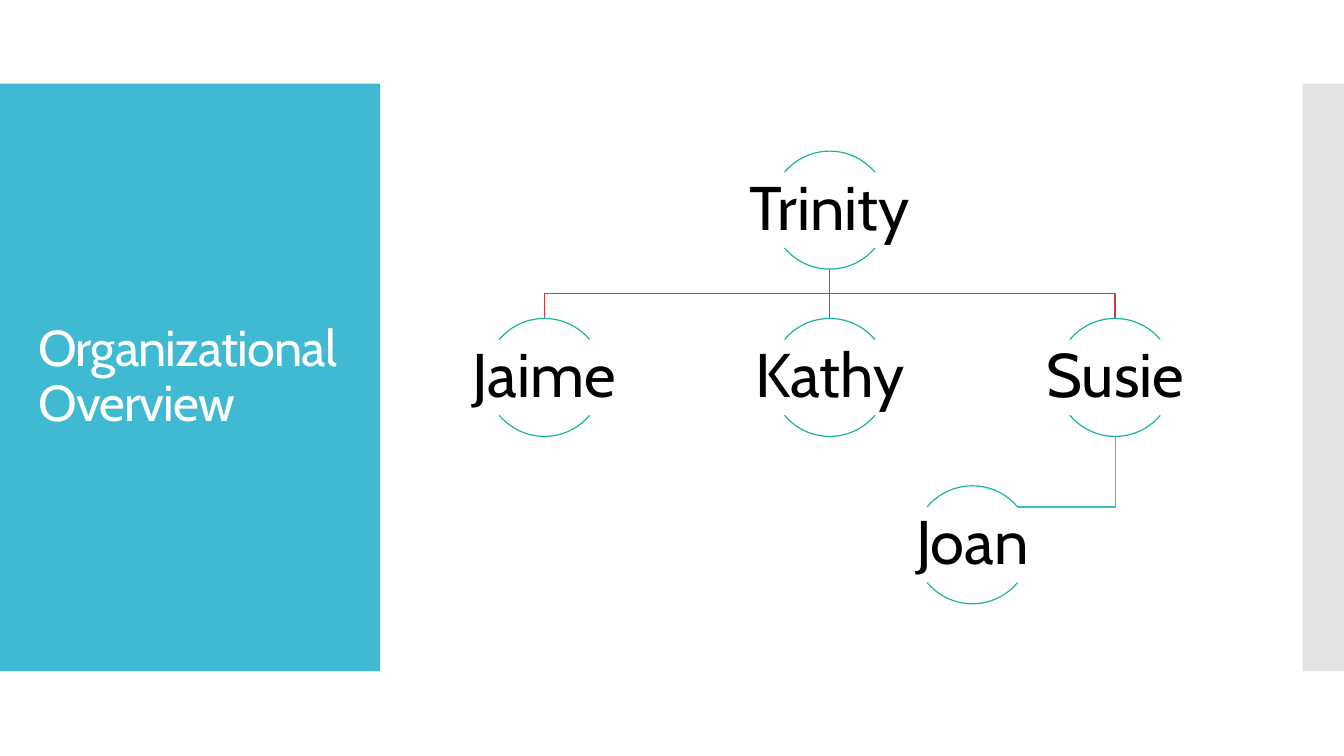
from pptx import Presentation
from pptx.dml.color import RGBColor
from pptx.enum.shapes import MSO_CONNECTOR as Link, MSO_SHAPE as Kind
from pptx.enum.text import MSO_ANCHOR as Anchor, MSO_AUTO_SIZE as Fit, PP_ALIGN as Align
from pptx.oxml.ns import qn
from pptx.util import Inches, Pt
from lxml import etree

TEAL = RGBColor(0x40, 0xBA, 0xD2)
GRAY = RGBColor(0xC8, 0xC8, 0xC8)
RED = RGBColor(0xD5, 0x39, 0x3D)
GREEN = RGBColor(0x1A, 0xB3, 0x9F)
WHITE = RGBColor(0xFF, 0xFF, 0xFF)
BLACK = RGBColor(0, 0, 0)

FONT = "Cabin"
SIZE = 1.17  # circle diameter
MID = 8.23  # centre of the chart
STEP = 2.83  # between neighbours
TOP, ROW = 1.5, 1.66
ARCS = ((132, 192), (24, 84))  # upper and lower part of each circle


def add_panel(slide, left, width, color, alpha=None):
    panel = slide.shapes.add_shape(
        Kind.RECTANGLE, Inches(left), Inches(0.83), Inches(width), Inches(5.83))
    panel.shadow.inherit = False
    panel.line.fill.background()
    panel.fill.solid()
    panel.fill.fore_color.rgb = color
    if alpha:
        tint = panel.fill._xPr.find(qn("a:solidFill"))[0]
        etree.SubElement(tint, qn("a:alpha")).set("val", str(alpha * 1000))


def set_text(frame, text, size, color, align):
    frame.text = text
    frame.word_wrap = True
    frame.auto_size = Fit.NONE
    frame.vertical_anchor = Anchor.MIDDLE
    para = frame.paragraphs[0]
    para.alignment = align
    para.line_spacing = 0.9
    para.font.name = FONT
    para.font.size = Pt(size)
    para.font.color.rgb = color
    return para


def add_title(slide, text):
    title = slide.shapes.title
    title.left, title.top = Inches(0.28), Inches(1.23)
    title.width, title.height = Inches(3.22), Inches(5.03)
    para = set_text(title.text_frame, text, 36, WHITE, Align.LEFT)
    para._p.pPr.find(qn("a:defRPr")).set("spc", "-60")
    slide.shapes._spTree.append(title._element)  # in front of the panels


def set_line(shape, color):
    shape.line.color.rgb = color
    shape.line.width = Pt(0.85)


def add_elbow(slide, points, color):
    spots = [(Inches(x), Inches(y)) for x, y in points]
    form = slide.shapes.build_freeform(*spots[0])
    form.add_line_segments(spots[1:], close=False)
    elbow = form.convert_to_shape()
    elbow.shadow.inherit = False
    elbow.fill.background()
    set_line(elbow, color)


def add_stem(slide, x, top, end, color):
    stem = slide.shapes.add_connector(
        Link.STRAIGHT, Inches(x), Inches(top), Inches(x), Inches(end))
    etree.SubElement(stem._element.spPr, qn("a:effectLst"))
    set_line(stem, color)


def add_person(slide, name, x, top):
    """Draw a name between two arcs of a circle centred on x."""
    for start, end in ARCS:
        arc = slide.shapes.add_shape(
            Kind.ARC, Inches(x - SIZE / 2), Inches(top), Inches(SIZE), Inches(SIZE))
        arc.adjustments[0] = start
        arc.adjustments[1] = end
        arc.shadow.inherit = False
        arc.fill.background()
        set_line(arc, GREEN)
    box = slide.shapes.add_textbox(
        Inches(x - SIZE), Inches(top + 0.21), Inches(2 * SIZE), Inches(0.75))
    frame = box.text_frame
    frame.margin_left = frame.margin_right = Inches(0.03)
    frame.margin_top = frame.margin_bottom = Inches(0.03)
    set_text(frame, name, 44, BLACK, Align.CENTER)


def main():
    deck = Presentation()
    deck.slide_width, deck.slide_height = Inches(13.33), Inches(7.5)
    slide = deck.slides.add_slide(deck.slide_layouts[5])

    add_panel(slide, 0, 3.77, TEAL)
    add_panel(slide, 12.92, 0.41, GRAY, alpha=50)
    add_title(slide, "Organizational Overview")

    left, right = MID - STEP, MID + STEP
    second, third = TOP + ROW, TOP + 2 * ROW
    base = TOP + SIZE
    bend = (base + second) / 2
    joint = third + 0.21
    add_elbow(slide, [(right, second + SIZE), (right, joint), (10.09, joint)], TEAL)
    add_elbow(slide, [(MID, base), (MID, bend), (right, bend), (right, second)], RED)
    add_stem(slide, MID, base, second, RED)
    add_elbow(slide, [(MID, base), (MID, bend), (left, bend), (left, second)], RED)

    people = (
        ("Trinity", MID, TOP),
        ("Jaime", left, second),
        ("Kathy", MID, second),
        ("Susie", right, second),
        ("Joan", MID + STEP / 2, third),
    )
    for name, x, top in people:
        add_person(slide, name, x, top)

    deck.save("out.pptx")


if __name__ == "__main__":
    main()
